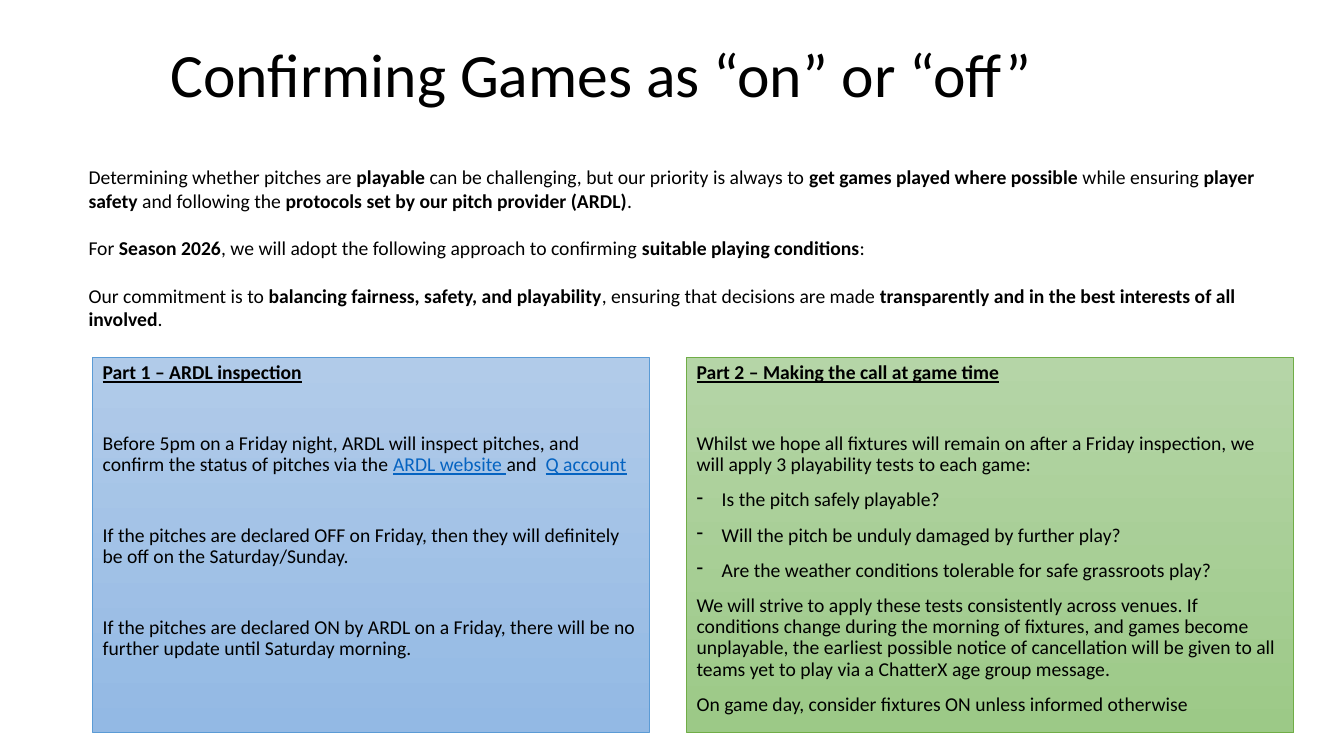
from lxml import etree
from pptx import Presentation
from pptx import util as u
from pptx.dml.color import RGBColor
from pptx.enum import shapes, text
from pptx.oxml.ns import qn

BLACK = RGBColor(0, 0, 0)
LINK = RGBColor(0x05, 0x63, 0xC1)
BLUE = RGBColor(0x5B, 0x9B, 0xD5)
SKY = RGBColor(0xB1, 0xCB, 0xE9)
AZURE = RGBColor(0x93, 0xB9, 0xE4)
GREEN = RGBColor(0x70, 0xAD, 0x47)
MINT = RGBColor(0xB5, 0xD5, 0xA7)
LEAF = RGBColor(0x9C, 0xC9, 0x87)

TITLE = "Confirming Games as “on” or “off”"
INTRO = [
    "Determining whether pitches are *playable* can be challenging, but our priority is always to "
    "*get games played where possible* while ensuring *player safety* and following the "
    "*protocols set by our pitch provider (ARDL)*.",
    "For *Season 2026*, we will adopt the following approach to confirming *suitable playing conditions*:",
    "Our commitment is to *balancing fairness, safety, and playability*, ensuring that decisions are made "
    "*transparently and in the best interests of all involved*.",
]
CHECK = [
    "Before 5pm on a Friday night, ARDL will inspect pitches, and confirm the status of pitches via the "
    "*ARDL website *and  *Q account*",
    "If the pitches are declared OFF on Friday, then they will definitely be off on the Saturday/Sunday.",
    "If the pitches are declared ON by ARDL on a Friday, there will be no further update until Saturday morning.",
]
HOPE = ("Whilst we hope all fixtures will remain on after a Friday inspection, "
        "we will apply 3 playability tests to each game:")
TESTS = [
    "Is the pitch safely playable?",
    "Will the pitch be unduly damaged by further play?",
    "Are the weather conditions tolerable for safe grassroots play?",
]
CLOSE = [
    "We will strive to apply these tests consistently across venues. If conditions change during the morning "
    "of fixtures, and games become unplayable, the earliest possible notice of cancellation will be given to "
    "all teams yet to play via a ChatterX age group message.",
    "On game day, consider fixtures ON unless informed otherwise",
]
NEAR, FAR, GAP = 10, 35.4, 17.1


def bold(font):
    """Make a font bold."""
    font.bold = True


def link(font):
    """Give a font the look of a link."""
    font.underline = True
    font.color.rgb = LINK


def head(font):
    """Give a font the look of a panel heading."""
    font.bold = font.underline = True


def write(frame, line, mark=bold, size=14, gap=0, lead=None):
    """Add a paragraph whose starred parts take the mark style."""
    first = not frame.paragraphs[0].runs
    para = frame.paragraphs[0] if first else frame.add_paragraph()
    para.alignment = text.PP_ALIGN.LEFT
    para.line_spacing = lead
    para.space_before = u.Pt(0 if first else gap)
    for i, part in enumerate(line.split("*")):
        if part:
            run = para.add_run()
            run.text = part
            run.font.name = "Calibri"
            run.font.size = u.Pt(size)
            run.font.color.rgb = BLACK
            if i % 2:
                mark(run.font)
    return para


def dash(para):
    """Hang a dash bullet on a paragraph."""
    props = para._p.get_or_add_pPr()
    props.set("marL", str(u.Inches(0.25)))
    props.set("indent", str(u.Inches(-0.25)))
    etree.SubElement(props, qn("a:buChar")).set("char", "-")


def label(slide, left, top, width, height):
    """Add a wrapping text box and return its frame."""
    box = slide.shapes.add_textbox(*map(u.Inches, (left, top, width, height)))
    box.text_frame.word_wrap = True
    return box.text_frame


def panel(slide, left, width, edge, shades, title):
    """Add a shaded panel with its heading and return its frame."""
    box = slide.shapes.add_shape(shapes.MSO_SHAPE.RECTANGLE, u.Inches(left), u.Inches(3.55),
                                 u.Inches(width), u.Inches(3.72))
    box.shadow.inherit = False
    box.fill.gradient()
    box.fill.gradient_angle = 270
    for stop, shade in zip(box.fill.gradient_stops, shades):
        stop.color.rgb = shade
        stop.position = shades.index(shade)
    box.line.color.rgb = edge
    box.line.width = u.Pt(0.5)
    frame = box.text_frame
    frame.word_wrap = True
    frame.vertical_anchor = text.MSO_ANCHOR.TOP
    write(frame, f"*{title}*", head, lead=0.9)
    return frame


def main():
    """Build the slide."""
    deck = Presentation()
    deck.slide_width, deck.slide_height = u.Inches(13.33), u.Inches(7.5)
    slide = deck.slides.add_slide(deck.slide_layouts[6])

    frame = label(slide, 1.59, 0.15, 11.5, 1.23)
    frame.vertical_anchor = text.MSO_ANCHOR.MIDDLE
    write(frame, TITLE, size=44, lead=0.9)

    left = panel(slide, 0.92, 5.52, BLUE, (SKY, AZURE), "Part 1 – ARDL inspection")
    for line in CHECK:
        write(left, line, link, gap=FAR, lead=0.9)

    right = panel(slide, 6.81, 6.02, GREEN, (MINT, LEAF), "Part 2 – Making the call at game time")
    write(right, HOPE, gap=FAR, lead=0.9)
    for line in TESTS:
        dash(write(right, line, gap=NEAR, lead=0.9))
    for line in CLOSE:
        write(right, line, gap=NEAR, lead=0.9)

    frame = label(slide, 0.78, 1.59, 11.93, 1.75)
    for line in INTRO:
        write(frame, line, gap=GAP)
    deck.save("out.pptx")


if __name__ == "__main__":
    main()
